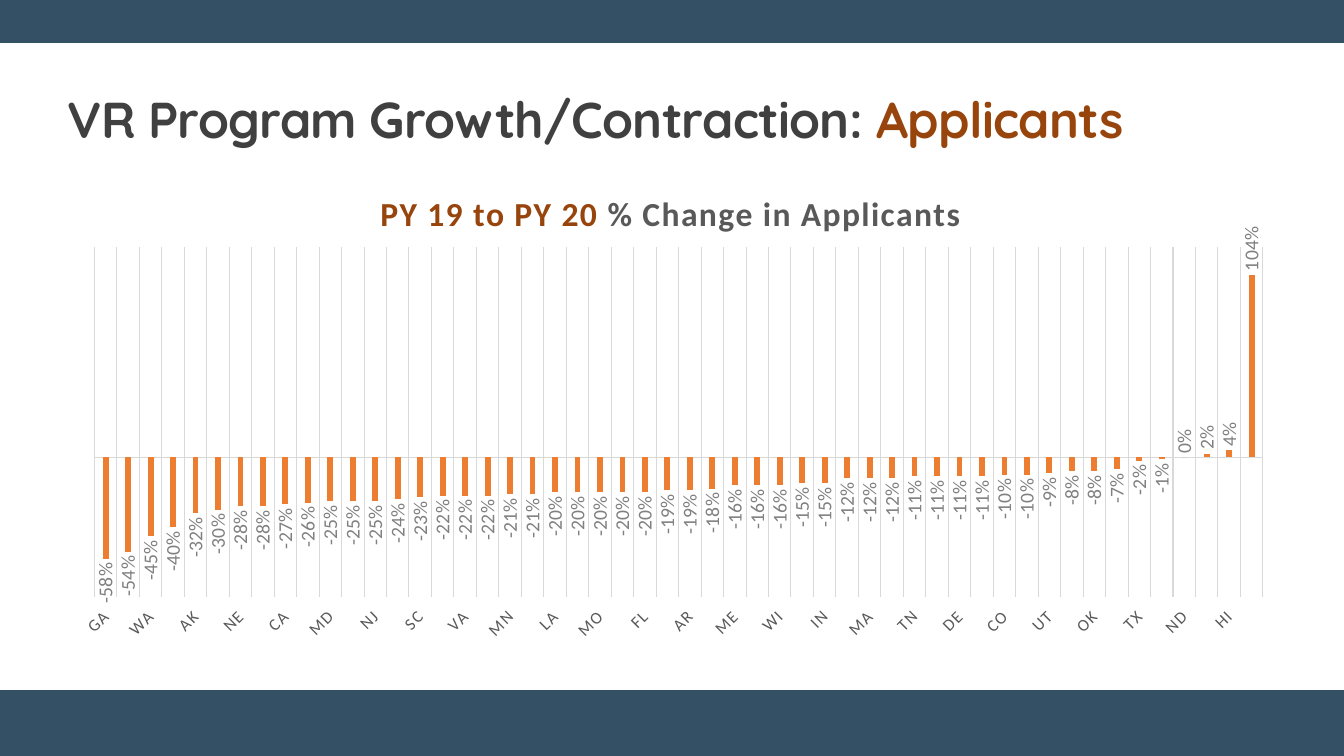
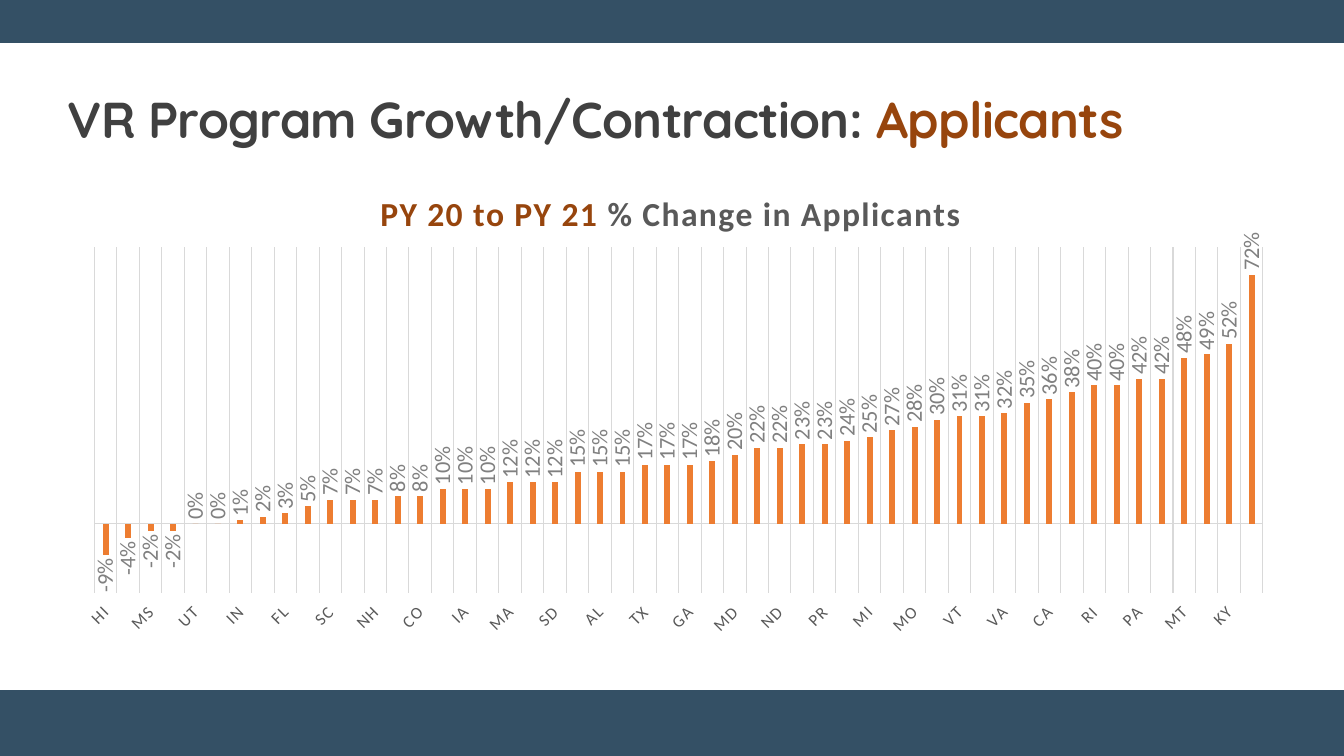
from lxml import etree
from pptx import Presentation
from pptx.chart.data import CategoryChartData
from pptx.dml.color import RGBColor
from pptx.enum.chart import (XL_CHART_TYPE, XL_LABEL_POSITION, XL_TICK_LABEL_POSITION,
                             XL_TICK_MARK)
from pptx.enum.shapes import MSO_SHAPE
from pptx.enum.text import MSO_ANCHOR, MSO_AUTO_SIZE, PP_ALIGN
from pptx.oxml.ns import qn
from pptx.util import Inches, Pt

COLUMNS = XL_CHART_TYPE.COLUMN_CLUSTERED
OUTSIDE_END = XL_LABEL_POSITION.OUTSIDE_END
LOW = XL_TICK_LABEL_POSITION.LOW
NO_TICK = XL_TICK_MARK.NONE
RECTANGLE = MSO_SHAPE.RECTANGLE
LEFT, CENTER = PP_ALIGN.LEFT, PP_ALIGN.CENTER

# Shared look
NAVY = RGBColor(0x34, 0x50, 0x65)
RUST = RGBColor(0x97, 0x45, 0x0D)
ORANGE = RGBColor(0xED, 0x7D, 0x31)
CHARCOAL = RGBColor(0x40, 0x40, 0x40)
DARK_GRAY = RGBColor(0x59, 0x59, 0x59)
MID_GRAY = RGBColor(0x80, 0x80, 0x80)
LIGHT_GRAY = RGBColor(0xD9, 0xD9, 0xD9)

WIDTH, HEIGHT = 13.33, 7.5
MARGIN, CONTENT_WIDTH = 0.57, 12.2
BANDS = [(0, 0.42), (6.85, 0.65)]  # top, height
TITLE_TOP, TITLE_HEIGHT = 0.81, 0.8
TITLE_FONT = {"name": "Quicksand", "size": Pt(36), "bold": True}
CHART_TITLE_FONT = {"name": "Calibri", "size": Pt(24), "bold": True}
AXIS_FONT = {"name": "Calibri", "size": Pt(12), "bold": False}
LABEL_FONT = {"name": "Calibri", "bold": False}

# Shares of the chart area
PLOT_AREA = {"x": 0.03, "y": 0.16, "w": 0.95, "h": 0.73}
CHART_TITLE_AREA = {"x": 0.26, "y": 0.04}

# Content
TITLE = [("VR Program Growth/Contraction: ", CHARCOAL), ("Applicants", RUST)]
CHARTS = [
    {
        "years": "PY 19 to PY 20",
        "top": 1.69, "height": 4.76, "gap": 284, "label_size": 14,
        "minimum": -0.8, "maximum": 1.2,
        "states": "GA MT WA CT AK RI NE NM CA AZ MD NC NJ OR SC VT VA IL MN KY LA KS MO "
                  "MI FL PA AR OH ME IA WI NV IN AL MA ID TN SD DE NY CO WY UT DC OK MS "
                  "TX NH ND PR HI WV",
        "percents": [-58, -54, -45, -40, -32, -30, -28, -28, -27, -26, -25, -25, -25,
                     -24, -23, -22, -22, -22, -21, -21, -20, -20, -20, -20, -20, -19,
                     -19, -18, -16, -16, -16, -15, -15, -12, -12, -12, -11, -11, -11,
                     -11, -10, -10, -9, -8, -8, -7, -2, -1, 0, 2, 4, 104],
    },
    {
        "years": "PY 20 to PY 21",
        "top": 1.7, "height": 4.7, "gap": 279, "label_size": 16,
        "minimum": -0.2, "maximum": 0.8,
        "states": "HI DC MS ID UT AZ IN LA FL AR SC WY NH TN CO NC IA OR MA OH SD NY AL "
                  "KS TX NJ GA WI MD ME ND IL PR NE MI MN MO OK VT DE VA NM CA NV RI CT "
                  "PA WA MT AK KY WV",
        "percents": [-9, -4, -2, -2, 0, 0, 1, 2, 3, 5, 7, 7, 7, 8, 8, 10, 10, 10, 12,
                     12, 12, 15, 15, 15, 17, 17, 17, 18, 20, 22, 22, 23, 23, 24, 25,
                     27, 28, 30, 31, 31, 32, 35, 36, 38, 40, 40, 42, 42, 48, 49, 52, 72],
    },
]


def format_font(font, values, color):
    for name, value in values.items():
        setattr(font, name, value)
    font.color.rgb = color


def write_runs(paragraph, runs, values):
    for text, color in runs:
        run = paragraph.add_run()
        run.text = text
        format_font(run.font, values, color)


def set_attribute(root, query, name, value):
    for element in root.xpath(query):
        element.set(name, str(value))


def set_layout(parent, index, shares):
    """Fix the place of a chart part, in shares of the chart area."""
    for old in parent.findall(qn("c:layout")):
        parent.remove(old)
    layout = etree.Element(qn("c:layout"))
    manual = etree.SubElement(layout, qn("c:manualLayout"))
    if "w" in shares:
        etree.SubElement(manual, qn("c:layoutTarget")).set("val", "inner")
    for name in "xy":
        etree.SubElement(manual, qn(f"c:{name}Mode")).set("val", "edge")
    for name, share in shares.items():
        etree.SubElement(manual, qn(f"c:{name}")).set("val", str(share))
    parent.insert(index, layout)


def add_bands(slide, master):
    """Draw the bands and move them to the back of the master."""
    for number, (top, height) in enumerate(BANDS):
        band = slide.shapes.add_shape(RECTANGLE, 0, Inches(top), Inches(WIDTH),
                                      Inches(height))
        band.shadow.inherit = False
        band.fill.solid()
        band.fill.fore_color.rgb = NAVY
        band.line.color.rgb = NAVY
        band.line.width = Pt(1)
        set_attribute(band.element, ".//p:cNvPr", "id", 100 + number)
        master.shapes.element.insert(2 + number, band.element)


def add_title(slide):
    title = slide.shapes.title
    frame = title.text_frame
    frame.word_wrap = True
    frame.auto_size = MSO_AUTO_SIZE.NONE
    frame.vertical_anchor = MSO_ANCHOR.MIDDLE
    paragraph = frame.paragraphs[0]
    paragraph.alignment = LEFT
    paragraph.line_spacing = 0.9
    write_runs(paragraph, TITLE, TITLE_FONT)
    set_attribute(title.element, ".//a:rPr", "spc", -50)


def add_change_chart(slide, content):
    data = CategoryChartData(number_format="0%")
    data.categories = content["states"].split()
    data.add_series("Series 1", [percent / 100 for percent in content["percents"]])
    chart = slide.shapes.add_chart(
        COLUMNS, Inches(MARGIN), Inches(content["top"]), Inches(CONTENT_WIDTH),
        Inches(content["height"]), data).chart
    chart.has_legend = False
    chart.font.name = "Calibri"
    chart.font.size = Pt(10)

    # Chart title
    paragraph = chart.chart_title.text_frame.paragraphs[0]
    paragraph.alignment = CENTER
    write_runs(paragraph, [(content["years"], RUST),
                           (" % Change in Applicants", DARK_GRAY)], CHART_TITLE_FONT)
    chart.chart_title.include_in_layout = False

    # Axes
    states = chart.category_axis
    states.tick_label_position = LOW
    states.major_tick_mark = states.minor_tick_mark = NO_TICK
    states.has_major_gridlines = True
    for line in (states.format.line, states.major_gridlines.format.line):
        line.color.rgb = LIGHT_GRAY
        line.width = Pt(0.75)
    format_font(states.tick_labels.font, AXIS_FONT, DARK_GRAY)
    change = chart.value_axis
    change.has_major_gridlines = False
    change.visible = False
    change.minimum_scale = content["minimum"]
    change.maximum_scale = content["maximum"]

    # Columns and labels
    plot = chart.plots[0]
    plot.vary_by_categories = False
    plot.gap_width = content["gap"]
    plot.overlap = -90
    series = plot.series[0]
    series.invert_if_negative = False
    series.format.fill.solid()
    series.format.fill.fore_color.rgb = ORANGE
    labels = series.data_labels
    labels.show_value = True
    labels.position = OUTSIDE_END
    labels.number_format = "0%"
    labels.number_format_is_linked = False
    format_font(labels.font, {**LABEL_FONT, "size": Pt(content["label_size"])}, MID_GRAY)

    # Text rotation, letter spacing and fixed places
    root = chart.element
    set_attribute(root, ".//c:dLbls/c:txPr/a:bodyPr", "rot", -90 * 60000)
    set_attribute(root, ".//c:catAx/c:txPr/a:bodyPr", "rot", -45 * 60000)
    set_attribute(root, ".//c:catAx/c:txPr//a:defRPr", "spc", 100)
    set_attribute(root, ".//c:title//a:rPr", "spc", 100)
    set_layout(root.xpath(".//c:chart/c:title")[0], 1, CHART_TITLE_AREA)
    set_layout(root.xpath(".//c:plotArea")[0], 0, PLOT_AREA)


def main():
    presentation = Presentation()
    presentation.slide_width = Inches(WIDTH)
    presentation.slide_height = Inches(HEIGHT)
    layout = presentation.slide_layouts.get_by_name("Title Only")
    layout_title = layout.placeholders[0]
    layout_title.left, layout_title.top = Inches(MARGIN), Inches(TITLE_TOP)
    layout_title.width, layout_title.height = Inches(CONTENT_WIDTH), Inches(TITLE_HEIGHT)

    for number, content in enumerate(CHARTS):
        slide = presentation.slides.add_slide(layout)
        if number == 0:
            add_bands(slide, presentation.slide_master)
        add_title(slide)
        add_change_chart(slide, content)
    presentation.save("out.pptx")


if __name__ == "__main__":
    main()
